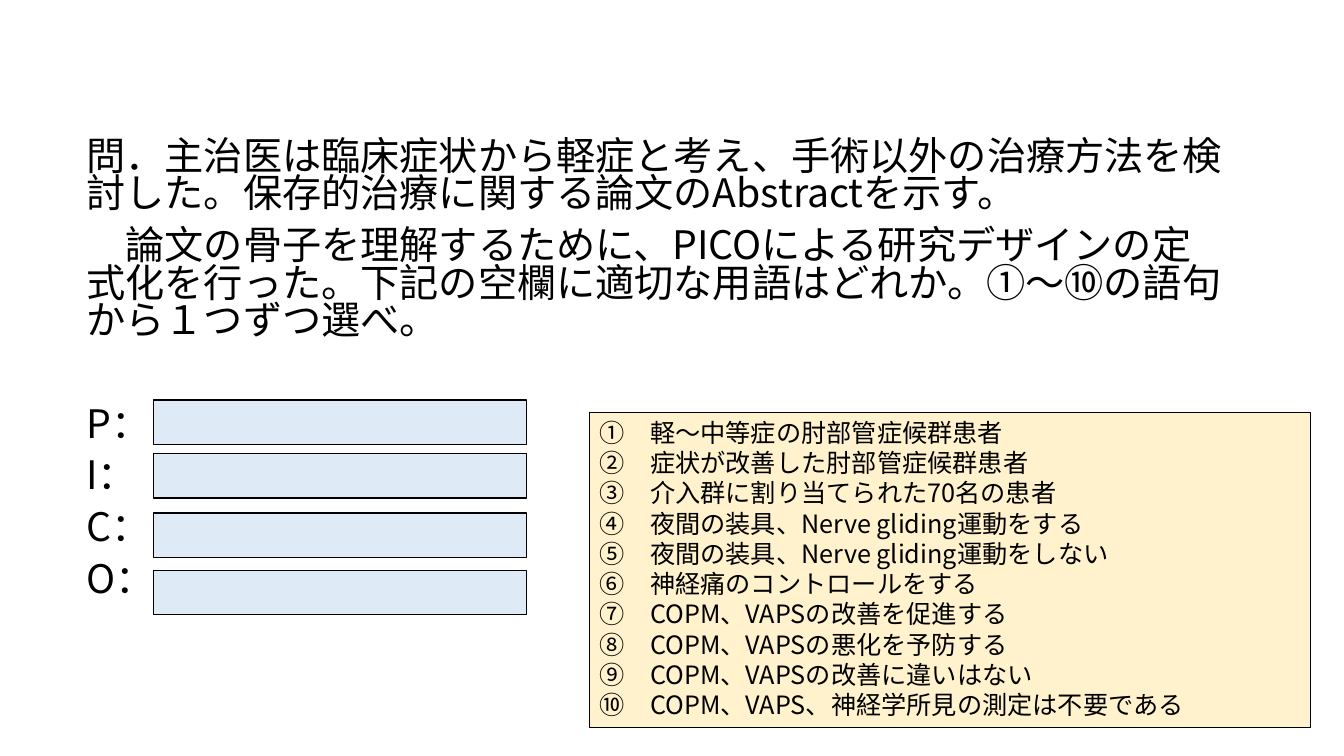
from pptx import Presentation
from pptx.dml.color import RGBColor
from pptx.enum.shapes import MSO_SHAPE
from pptx.enum.text import MSO_ANCHOR, PP_ALIGN
from pptx.oxml.ns import qn
from pptx.util import Inches, Pt

RECT = MSO_SHAPE.RECTANGLE
TOP = MSO_ANCHOR.TOP
LEFT = PP_ALIGN.LEFT
FONT = "Noto Sans CJK JP"
COLORS = {"ink": "000000", "choices": "FFF2CC", "answer": "DEEBF7"}

QUESTION = [
    "問．主治医は臨床症状から軽症と考え、手術以外の治療方法を検討した。保存的治療に関する論文のAbstractを示す。",
    "　論文の骨子を理解するために、PICOによる研究デザインの定式化を行った。下記の空欄に適切な用語はどれか。①～⑩の語句から１つずつ選べ。",
]
PICO = ["P：", "I：", "C：", "O："]
ANSWER_TOPS = [3.97, 4.5, 5.09, 5.66]
CHOICES = [
    "①　軽～中等症の肘部管症候群患者",
    "②　症状が改善した肘部管症候群患者",
    "③　介入群に割り当てられた70名の患者",
    "④　夜間の装具、Nerve gliding運動をする",
    "⑤　夜間の装具、Nerve gliding運動をしない",
    "⑥　神経痛のコントロールをする",
    "➆　COPM、VAPSの改善を促進する",
    "⑧　COPM、VAPSの悪化を予防する",
    "⑨　COPM、VAPSの改善に違いはない",
    "⑩　COPM、VAPS、神経学所見の測定は不要である",
]


def write(p, text, size=18, color="ink", before=0, spacing=1.0):
    """Put formatted text into a paragraph."""
    p.alignment = LEFT
    p.space_before = Pt(before)
    p.line_spacing = spacing
    r = p.add_run()
    r.text = text
    r.font.size = Pt(size)
    r.font.name = FONT
    r.font.color.rgb = RGBColor.from_string(COLORS[color])
    ea = r.font._element.makeelement(qn("a:ea"), {"typeface": FONT})
    r.font._element.find(qn("a:latin")).addnext(ea)


class SlideBuilder:
    """Hold the style and the current slide."""

    def __init__(self, slide):
        self.slide = slide

    def fill_text(self, tf, items):
        """Write one paragraph for each pair of text and format."""
        tf.word_wrap = True
        tf.vertical_anchor = TOP
        for i, (text, style) in enumerate(items):
            write(tf.add_paragraph() if i else tf.paragraphs[0], text, **style)

    def text(self, x, y, w, h, items):
        """Add a wrapped text box."""
        s = self.slide.shapes.add_textbox(Inches(x), Inches(y), Inches(w), Inches(h))
        self.fill_text(s.text_frame, items)

    def box(self, x, y, w, h, fill, line=1, items=()):
        """Add an outlined rectangle."""
        s = self.slide.shapes.add_shape(RECT, Inches(x), Inches(y), Inches(w), Inches(h))
        s.shadow.inherit = False
        s.fill.solid()
        s.fill.fore_color.rgb = RGBColor.from_string(COLORS[fill])
        s.line.color.rgb = RGBColor.from_string(COLORS["ink"])
        s.line.width = Pt(line)
        if items:
            self.fill_text(s.text_frame, items)


def main():
    """Build the quiz slide."""
    prs = Presentation()
    prs.slide_width, prs.slide_height = Inches(13.33), Inches(7.5)
    page = SlideBuilder(prs.slides.add_slide(prs.slide_layouts[6]))

    body = {"size": 28, "before": 10, "spacing": 0.8}
    first_label = {**body, "before": 47}
    items = [(text, body) for text in QUESTION]
    items += [(text, body if i else first_label) for i, text in enumerate(PICO)]
    page.text(0.76, 1.34, 11.5, 4.76, items)

    page.box(5.85, 4.09, 7.15, 3.13, "choices", 0.75, [(text, {}) for text in CHOICES])
    for top in ANSWER_TOPS:
        page.box(1.52, top, 3.7, 0.44, "answer")

    prs.save("out.pptx")


if __name__ == "__main__":
    main()
